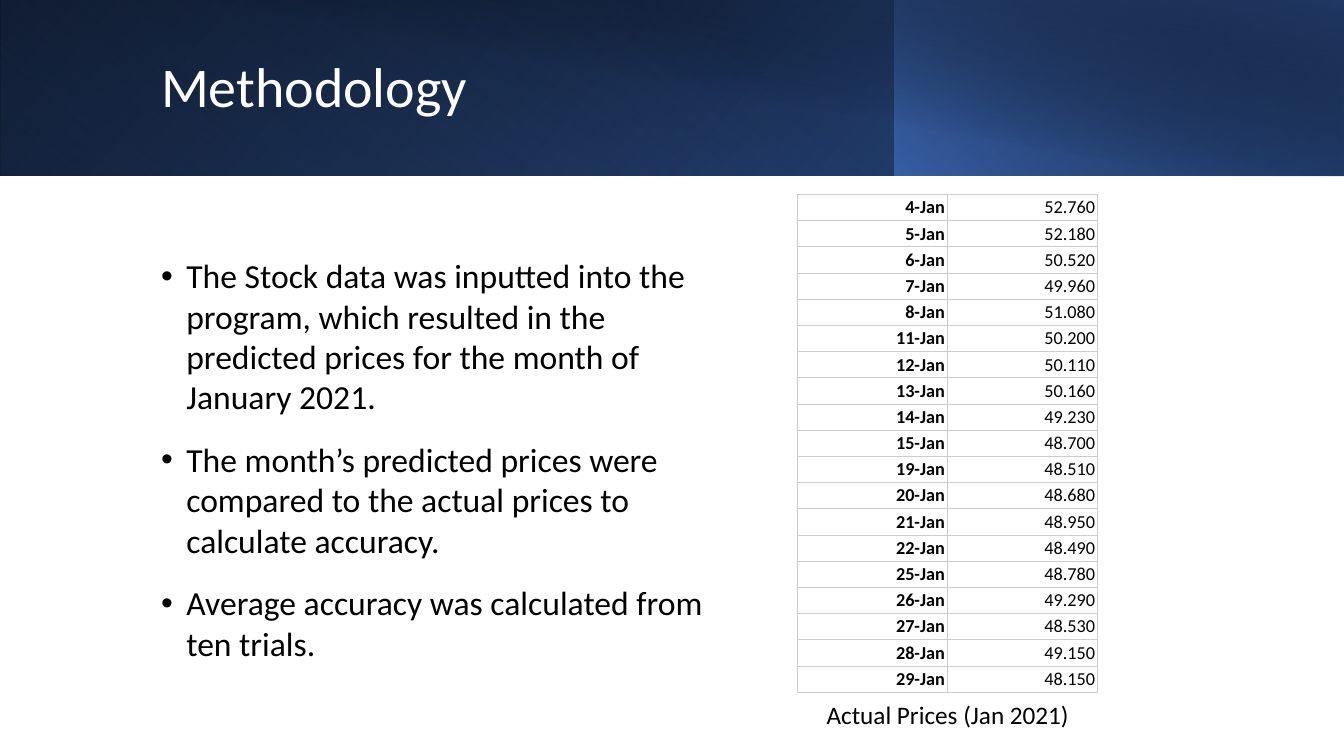
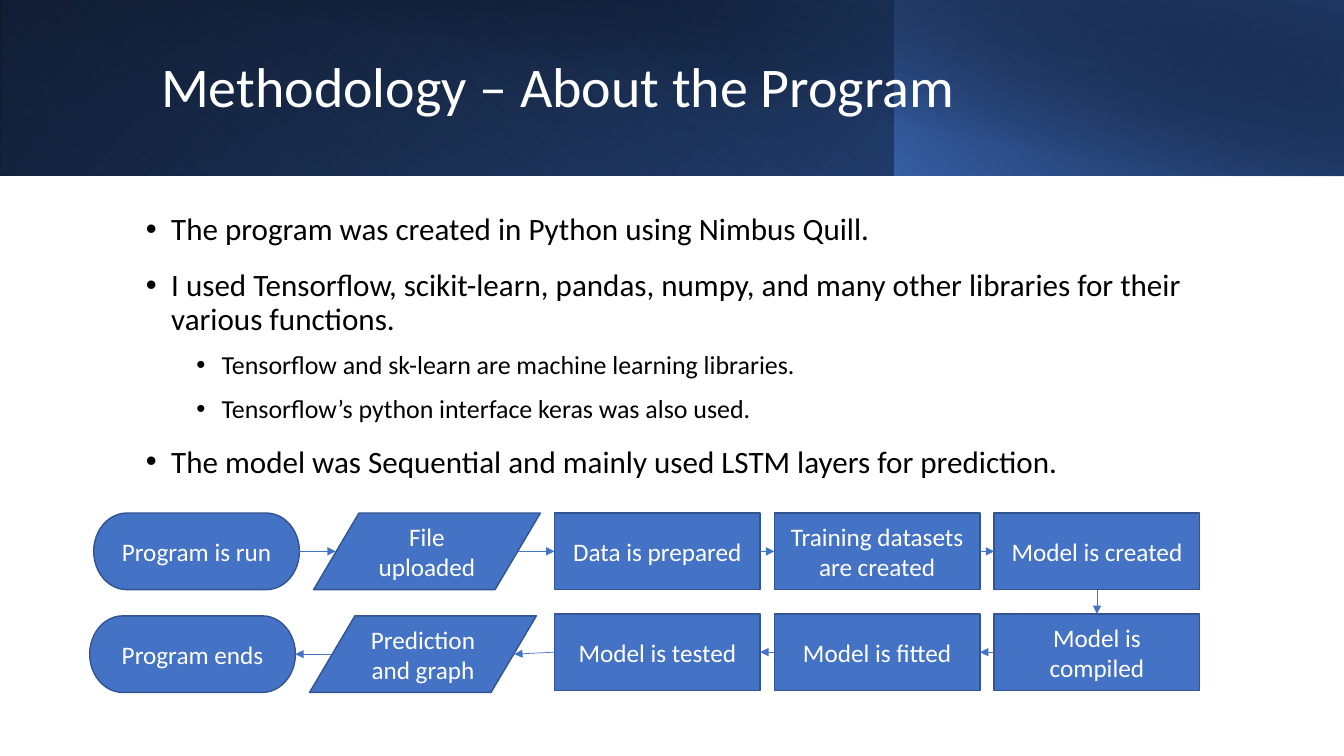
from dataclasses import dataclass
from typing import NamedTuple

from lxml import etree
from pptx import Presentation
from pptx.dml.color import RGBColor
from pptx.enum.shapes import MSO_CONNECTOR, MSO_SHAPE
from pptx.enum.text import MSO_ANCHOR, PP_ALIGN
from pptx.oxml.ns import qn
from pptx.shapes.autoshape import Shape
from pptx.slide import Slide
from pptx.table import _Cell
from pptx.text.text import TextFrame, _Paragraph
from pptx.util import Emu, Pt

RECT = MSO_SHAPE.RECTANGLE
TERMINATOR = MSO_SHAPE.FLOWCHART_TERMINATOR
INPUT_OUTPUT = MSO_SHAPE.FLOWCHART_DATA
STRAIGHT = MSO_CONNECTOR.STRAIGHT
MIDDLE, BOTTOM, TOP = MSO_ANCHOR.MIDDLE, MSO_ANCHOR.BOTTOM, MSO_ANCHOR.TOP
LEFT, CENTER, RIGHT = PP_ALIGN.LEFT, PP_ALIGN.CENTER, PP_ALIGN.RIGHT

EMU_PER_PX = 9144
FONT = "Calibri"
BLACK, WHITE = "000000", "FFFFFF"
BLUE, DEEP_BLUE, NAVY = "4472C4", "2F5597", "203864"
STEP_EDGE, GRID = "325491", "CCCCCC"


class Box(NamedTuple):
    left: int
    top: int
    width: int
    height: int


class Stop(NamedTuple):
    position: int
    color: str
    alpha: int = 100


@dataclass(frozen=True)
class Band:
    box: Box
    stops: tuple[Stop, ...]
    angle: int
    flipped: bool = True
    rotation: int = 0


@dataclass(frozen=True)
class Bullet:
    text: str
    size: float
    indent: int = 25
    before: int = 10
    line_spacing: float = 1.0


@dataclass(frozen=True)
class Step:
    text: str
    kind: MSO_SHAPE
    box: Box

    @property
    def slant(self) -> int:
        return round(self.box.width / 10) if self.kind == INPUT_OUTPUT else 0

    @property
    def middle(self) -> int:
        return self.box.top + self.box.height // 2

    @property
    def left_end(self) -> tuple[int, int]:
        return self.box.left + self.slant, self.middle

    @property
    def right_end(self) -> tuple[int, int]:
        return self.box.left + self.box.width - self.slant, self.middle


BANDS = (
    Band(Box(0, 0, 1333, 174), (Stop(0, BLACK), Stop(100, DEEP_BLUE)), 140),
    Band(Box(0, 0, 888, 174), (Stop(20, BLUE, 0), Stop(100, NAVY, 55)), 230, rotation=180),
    Band(Box(887, 0, 446, 174), (Stop(0, BLUE, 66), Stop(100, BLACK, 30)), 220),
    Band(Box(50, 0, 1283, 175), (Stop(50, BLACK, 0), Stop(99, NAVY, 52)), 280, flipped=False),
)
TITLE_BOX = Box(150, 32, 1082, 113)

METHOD = (
    Bullet("The Stock data was inputted into the program, which resulted in the "
           "predicted prices for the month of January 2021.", 24),
    Bullet("The month’s predicted prices were compared to the actual prices to "
           "calculate accuracy.", 24),
    Bullet("Average accuracy was calculated from ten trials.", 24),
)
PRICES = (
    ("4-Jan", "52.760"), ("5-Jan", "52.180"), ("6-Jan", "50.520"), ("7-Jan", "49.960"),
    ("8-Jan", "51.080"), ("11-Jan", "50.200"), ("12-Jan", "50.110"), ("13-Jan", "50.160"),
    ("14-Jan", "49.230"), ("15-Jan", "48.700"), ("19-Jan", "48.510"), ("20-Jan", "48.680"),
    ("21-Jan", "48.950"), ("22-Jan", "48.490"), ("25-Jan", "48.780"), ("26-Jan", "49.290"),
    ("27-Jan", "48.530"), ("28-Jan", "49.150"), ("29-Jan", "48.150"),
)
PRICE_ROW = 26
PRICE_BOX = Box(791, 193, 298, PRICE_ROW * len(PRICES))


def main_point(text: str) -> Bullet:
    return Bullet(text, 22.2, line_spacing=0.9)


def sub_point(text: str) -> Bullet:
    return Bullet(text, 18.5, indent=75, before=5, line_spacing=0.9)


PROGRAM = (
    main_point("The program was created in Python using Nimbus Quill."),
    main_point("I used Tensorflow, scikit-learn, pandas, numpy, and many other "
               "libraries for their various functions."),
    sub_point("Tensorflow and sk-learn are machine learning libraries."),
    sub_point("Tensorflow’s python interface keras was also used."),
    main_point("The model was Sequential and mainly used LSTM layers for prediction."),
)

STEP_WIDTH, SLANTED_WIDTH, STEP_HEIGHT, STEP_GAP = 204, 225, 76, 14
FLOW_LEFT, FLOW_TOP, RETURN_TOP = 93, 509, 609
STEP_KINDS = (TERMINATOR, INPUT_OUTPUT, RECT, RECT, RECT)
OUTWARD = ("Program is run", "File uploaded", "Data is prepared",
           "Training datasets are created", "Model is created")
RETURN = ("Program ends", "Prediction and graph", "Model is tested",
          "Model is fitted", "Model is compiled")


def px(length: int) -> Emu:
    return Emu(length * EMU_PER_PX)


def place(box: Box) -> tuple[Emu, ...]:
    return tuple(px(length) for length in box)


def rgb(color: str) -> RGBColor:
    return RGBColor.from_string(color)


def style(paragraph: _Paragraph, size: float, color: str, align: PP_ALIGN = LEFT,
          bold: bool = False) -> None:
    paragraph.alignment = align
    font = paragraph.font
    font.name, font.size, font.bold = FONT, Pt(size), bold
    font.color.rgb = rgb(color)


def add_text_frame(slide: Slide, box: Box, anchor: MSO_ANCHOR) -> TextFrame:
    frame = slide.shapes.add_textbox(*place(box)).text_frame
    frame.word_wrap = True
    frame.vertical_anchor = anchor
    return frame


def add_block(slide: Slide, kind: MSO_SHAPE, box: Box) -> Shape:
    block = slide.shapes.add_shape(kind, *place(box))
    block.shadow.inherit = False
    return block


def add_band(slide: Slide, band: Band) -> None:
    block = add_block(slide, RECT, band.box)
    block.line.fill.background()
    block.rotation = band.rotation
    properties = block._element.spPr
    if band.flipped:
        properties.find(qn("a:xfrm")).set("flipH", "1")
    block.fill.gradient()
    gradient = properties.find(qn("a:gradFill"))
    stops = gradient.find(qn("a:gsLst"))
    for default in list(stops):
        stops.remove(default)
    for stop in band.stops:
        mark = etree.SubElement(stops, qn("a:gs"), pos=str(stop.position * 1000))
        color = etree.SubElement(mark, qn("a:srgbClr"), val=stop.color)
        etree.SubElement(color, qn("a:alpha"), val=str(stop.alpha * 1000))
    direction = gradient.find(qn("a:lin"))
    direction.set("ang", str(band.angle * 60000))
    direction.set("scaled", "0")


def add_titled_slide(deck: Presentation, title: str) -> Slide:
    slide = deck.slides.add_slide(deck.slide_layouts[6])
    for band in BANDS:
        add_band(slide, band)
    heading = add_text_frame(slide, TITLE_BOX, MIDDLE).paragraphs[0]
    heading.text = title
    heading.line_spacing = 0.9
    style(heading, 40, WHITE)
    return slide


def add_bullets(slide: Slide, box: Box, bullets: tuple[Bullet, ...]) -> None:
    frame = add_text_frame(slide, box, MIDDLE)
    for index, bullet in enumerate(bullets):
        paragraph = frame.add_paragraph() if index else frame.paragraphs[0]
        paragraph.text = bullet.text
        paragraph.line_spacing = bullet.line_spacing
        paragraph.space_before, paragraph.space_after = Pt(bullet.before), Pt(6)
        properties = paragraph._p.get_or_add_pPr()
        properties.set("marL", str(px(bullet.indent)))
        properties.set("indent", str(px(-25)))
        etree.SubElement(properties, qn("a:buFont"), typeface="Arial")
        etree.SubElement(properties, qn("a:buChar"), char="•")
        style(paragraph, bullet.size, BLACK)


def outline_cell(cell: _Cell) -> None:
    properties = cell._tc.get_or_add_tcPr()
    for index, side in enumerate(("lnL", "lnR", "lnT", "lnB")):
        edge = etree.Element(qn(f"a:{side}"), w=str(Pt(0.75)))
        fill = etree.SubElement(edge, qn("a:solidFill"))
        etree.SubElement(fill, qn("a:srgbClr"), val=GRID)
        properties.insert(index, edge)


def add_prices(slide: Slide) -> None:
    table = slide.shapes.add_table(len(PRICES), 2, *place(PRICE_BOX)).table
    table.first_row = table.horz_banding = False
    for row, entry in enumerate(PRICES):
        table.rows[row].height = px(PRICE_ROW)
        for column, text in enumerate(entry):
            cell = table.cell(row, column)
            cell.fill.background()
            cell.vertical_anchor = BOTTOM
            cell.margin_left = cell.margin_right = px(3)
            cell.margin_top = cell.margin_bottom = px(2)
            paragraph = cell.text_frame.paragraphs[0]
            paragraph.text = text
            style(paragraph, 13, BLACK, RIGHT, bold=column == 0)
            outline_cell(cell)


def flow_row(texts: tuple[str, ...], top: int, shift: tuple[int, int] = (0, 0)) -> list[Step]:
    steps = []
    left = FLOW_LEFT
    for text, kind in zip(texts, STEP_KINDS):
        width = SLANTED_WIDTH if kind == INPUT_OUTPUT else STEP_WIDTH
        across, down = (0, 0) if kind == RECT else shift
        steps.append(Step(text, kind, Box(left + across, top + down, width, STEP_HEIGHT)))
        left += width + STEP_GAP
    return steps


def add_step(slide: Slide, step: Step) -> None:
    block = add_block(slide, step.kind, step.box)
    block.fill.solid()
    block.fill.fore_color.rgb = rgb(BLUE)
    block.line.color.rgb = rgb(STEP_EDGE)
    block.line.width = Pt(1)
    frame = block.text_frame
    frame.word_wrap = True
    frame.vertical_anchor = MIDDLE
    frame.paragraphs[0].text = step.text
    style(frame.paragraphs[0], 18, WHITE, CENTER)


def add_arrow(slide: Slide, start: tuple[int, int], end: tuple[int, int]) -> None:
    arrow = slide.shapes.add_connector(STRAIGHT, *(px(length) for length in start + end))
    arrow.line.color.rgb = rgb(BLUE)
    arrow.line.width = Pt(0.5)
    etree.SubElement(arrow.line._get_or_add_ln(), qn("a:tailEnd"), type="triangle")
    etree.SubElement(arrow._element.spPr, qn("a:effectLst"))


def add_flow(slide: Slide) -> None:
    outward = flow_row(OUTWARD, FLOW_TOP)
    back = flow_row(RETURN, RETURN_TOP, shift=(-4, 2))
    for step in outward + back:
        add_step(slide, step)
    for before, after in zip(outward, outward[1:]):
        add_arrow(slide, before.right_end, after.left_end)
    for after, before in zip(back, back[1:]):
        add_arrow(slide, before.left_end, after.right_end)
    turn = outward[-1].box
    center = turn.left + turn.width // 2
    add_arrow(slide, (center, turn.top + turn.height), (center, RETURN_TOP))


def main() -> None:
    deck = Presentation()
    deck.slide_width, deck.slide_height = px(1333), px(750)

    methodology = add_titled_slide(deck, "Methodology")
    add_bullets(methodology, Box(150, 254, 558, 403), METHOD)
    add_prices(methodology)
    caption = add_text_frame(methodology, Box(791, 689, 298, 40), TOP).paragraphs[0]
    caption.text = "Actual Prices (Jan 2021)"
    style(caption, 18, BLACK, CENTER)

    program = add_titled_slide(deck, "Methodology – About the Program")
    add_bullets(program, Box(135, 203, 1063, 282), PROGRAM)
    add_flow(program)

    deck.save("out.pptx")


if __name__ == "__main__":
    main()
